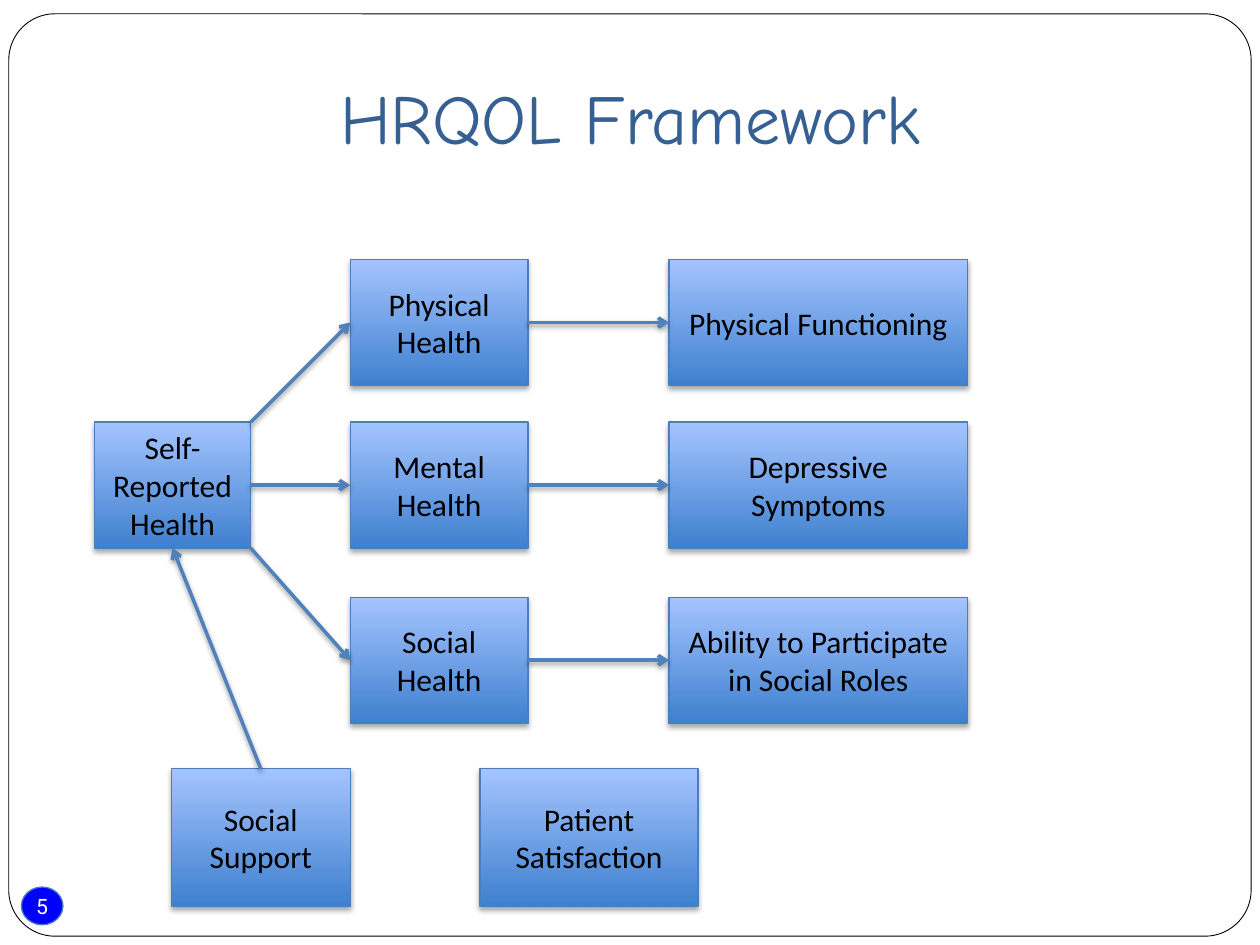
from dataclasses import dataclass

import lxml.etree
import pptx
import pptx.dml.color
import pptx.enum.shapes
import pptx.enum.text
import pptx.oxml
import pptx.oxml.ns
import pptx.util

SHAPE = pptx.enum.shapes.MSO_SHAPE
Inches, Pt = pptx.util.Inches, pptx.util.Pt

COLORS = {
    "title": "376092", "text": "000000", "frame": "000000",
    "box_bottom": "3F80CE", "box_top": "A4C4FF", "box_line": "4B7EBC",
    "arrow": "4F81BD", "badge": "0000FF", "badge_text": "FFFFFF",
}

# Grid: (left, width) of each column, (top, height) of each row, in inches
COLS = {"self": (0.75, 1.24), "domain": (2.78, 1.41), "outcome": (5.31, 2.37),
        "support": (1.36, 1.42), "satisfaction": (3.81, 1.73)}
ROWS = {"physical": (2.06, 1), "mental": (3.35, 1), "social": (4.74, 1),
        "bottom": (6.1, 1.09)}


@dataclass(frozen=True)
class Box:
    text: str
    col: str
    row: str

    def point(self, fx: float, fy: float) -> tuple[float, float]:
        """Point at shares fx, fy of the box's width and height."""
        (left, width), (top, height) = COLS[self.col], ROWS[self.row]
        return left + fx * width, top + fy * height


@dataclass(frozen=True)
class Arrow:
    start: Box
    start_at: tuple[float, float]
    end: Box
    end_at: tuple[float, float]


TOP_RIGHT, RIGHT, BOTTOM_RIGHT = (1, 0), (1, 0.5), (1, 1)
LEFT, TOP, BOTTOM = (0, 0.5), (0.5, 0), (0.5, 1)

self_reported = Box("Self-Reported Health", "self", "mental")
physical = Box("Physical Health", "domain", "physical")
mental = Box("Mental Health", "domain", "mental")
social = Box("Social Health", "domain", "social")
functioning = Box("Physical Functioning", "outcome", "physical")
symptoms = Box("Depressive Symptoms", "outcome", "mental")
roles = Box("Ability to Participate in Social Roles", "outcome", "social")
support = Box("Social Support", "support", "bottom")
satisfaction = Box("Patient Satisfaction", "satisfaction", "bottom")

BOXES = [self_reported, mental, physical, social, functioning, symptoms, roles,
         support, satisfaction]
ARROWS = [
    Arrow(self_reported, TOP_RIGHT, physical, LEFT),
    Arrow(self_reported, RIGHT, mental, LEFT),
    Arrow(self_reported, BOTTOM_RIGHT, social, LEFT),
    Arrow(physical, RIGHT, functioning, LEFT),
    Arrow(mental, RIGHT, symptoms, LEFT),
    Arrow(social, RIGHT, roles, LEFT),
    Arrow(support, TOP, self_reported, BOTTOM),
]


def rgb(name: str) -> pptx.dml.color.RGBColor:
    return pptx.dml.color.RGBColor.from_string(COLORS[name])


def set_line(line, color: str, width: float) -> None:
    line.color.rgb = rgb(color)
    line.width = Pt(width)


def set_text(sp, text: str, font: str, size: float, color: str) -> None:
    tf = sp.text_frame
    tf.text = text
    tf.word_wrap = True
    tf.vertical_anchor = pptx.enum.text.MSO_ANCHOR.MIDDLE
    p = tf.paragraphs[0]
    p.alignment = pptx.enum.text.PP_ALIGN.CENTER
    r = p.runs[0]
    r.font.name, r.font.size = font, Pt(size)
    r.font.color.rgb = rgb(color)


def add_shadow(sp, opacity: int, distance: float) -> None:
    """Soft black shadow straight below; call after fill and line are set."""
    sp._element.spPr.append(pptx.oxml.parse_xml(
        f'<a:effectLst {pptx.oxml.ns.nsdecls("a")}>'
        f'<a:outerShdw blurRad="{Pt(3.1)}" dist="{Pt(distance)}" dir="5400000" rotWithShape="0">'
        f'<a:srgbClr val="000000"><a:alpha val="{opacity * 1000}"/></a:srgbClr>'
        '</a:outerShdw></a:effectLst>'))


def add_shape(s, kind, left: float, top: float, width: float, height: float):
    return s.shapes.add_shape(kind, Inches(left), Inches(top), Inches(width), Inches(height))


def draw_box(s, box: Box) -> None:
    (left, width), (top, height) = COLS[box.col], ROWS[box.row]
    sp = add_shape(s, SHAPE.RECTANGLE, left, top, width, height)
    sp.fill.gradient()
    sp.fill.gradient_angle = 90
    for stop, color in zip(sp.fill.gradient_stops, ("box_bottom", "box_top")):
        stop.color.rgb = rgb(color)
    set_line(sp.line, "box_line", 0.75)
    add_shadow(sp, 35, 1.8)
    set_text(sp, box.text, "Calibri", 18, "text")


def draw_arrow(s, arrow: Arrow) -> None:
    points = arrow.start.point(*arrow.start_at) + arrow.end.point(*arrow.end_at)
    sp = s.shapes.add_connector(pptx.enum.shapes.MSO_CONNECTOR.STRAIGHT, *map(Inches, points))
    set_line(sp.line, "arrow", 2)
    ln = sp.line._get_or_add_ln()
    lxml.etree.SubElement(ln, pptx.oxml.ns.qn("a:tailEnd"), type="arrow")
    add_shadow(sp, 38, 1.6)


def draw_frame(s) -> None:
    sp = add_shape(s, SHAPE.ROUNDED_RECTANGLE, 0.07, 0.11, 9.86, 7.32)
    sp.adjustments[0] = 0.05
    sp.shadow.inherit = False
    sp.fill.background()
    set_line(sp.line, "frame", 0.5)


def draw_page_badge(s, number: int) -> None:
    sp = add_shape(s, SHAPE.OVAL, 0.17, 7.04, 0.33, 0.3)
    sp.shadow.inherit = False
    sp.fill.solid()
    sp.fill.fore_color.rgb = rgb("badge")
    set_line(sp.line, "box_line", 0.75)
    tf = sp.text_frame
    tf.margin_left = tf.margin_right = tf.margin_top = tf.margin_bottom = 0
    set_text(sp, str(number), "Roboto", 12.1, "badge_text")


def draw_title(s, text: str) -> None:
    sp = s.shapes.title
    sp.left, sp.top, sp.width, sp.height = map(Inches, (0.5, 0.3, 9, 1.25))
    set_text(sp, text, "Comic Neue", 40, "title")


def main() -> None:
    prs = pptx.Presentation()
    prs.slide_width, prs.slide_height = Inches(10), Inches(7.5)
    s = prs.slides.add_slide(prs.slide_layouts.get_by_name("Title Only"))
    draw_page_badge(s, 5)
    draw_frame(s)
    draw_title(s, "HRQOL Framework")
    for box in BOXES:
        draw_box(s, box)
    for arrow in ARROWS:
        draw_arrow(s, arrow)
    prs.save("out.pptx")


if __name__ == "__main__":
    main()
